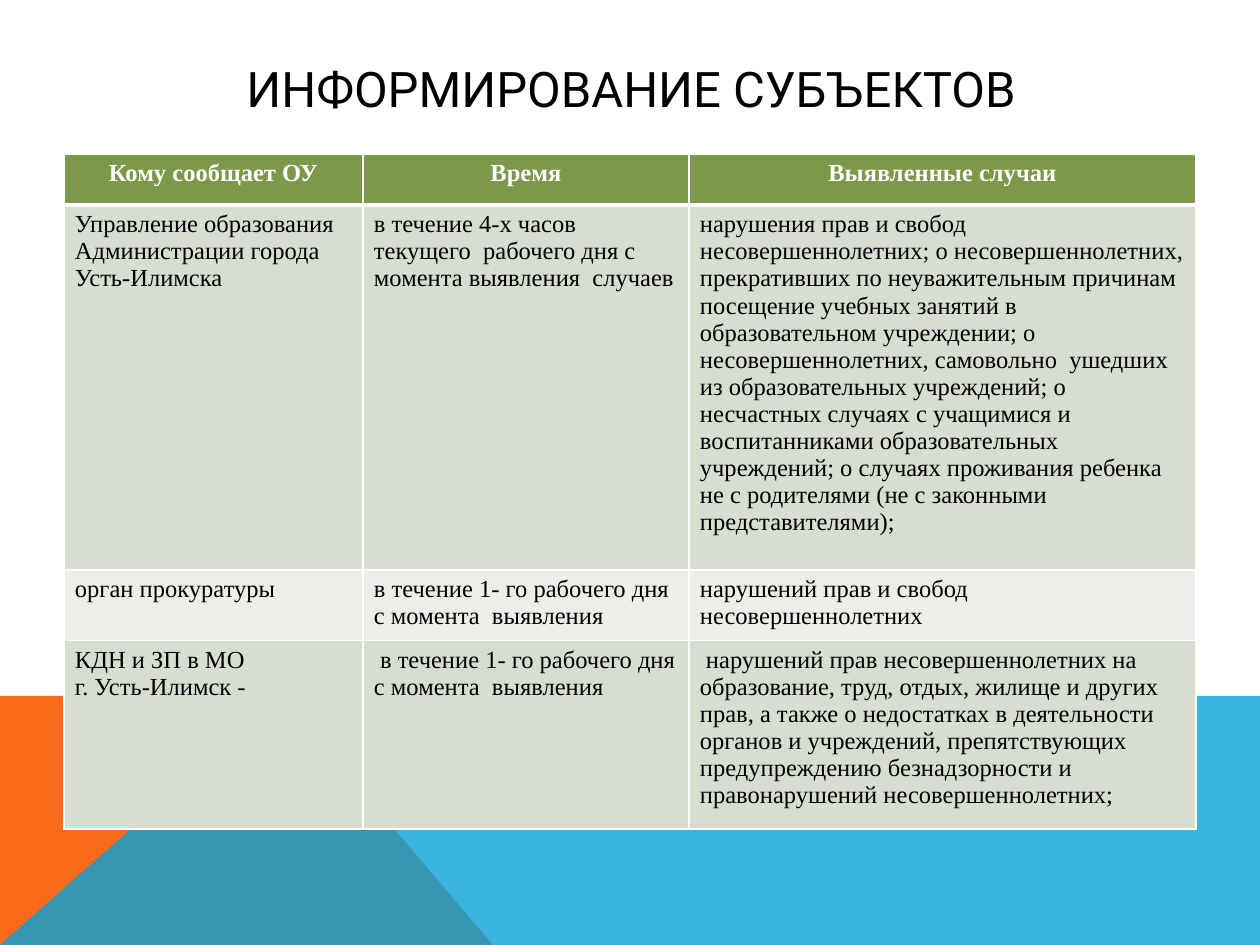
"""Builds the slide on whom a school informs, how soon and in which cases."""
from lxml.etree import SubElement
from pptx import Presentation
from pptx.dml.color import RGBColor
from pptx.enum.text import MSO_ANCHOR as Anchor, PP_ALIGN as Align
from pptx.oxml.ns import qn
from pptx.util import Pt

PX = 914400 // 126
WHITE, BLACK = "FFFFFF", "000000"
HEADER, BAND, LIGHT_BAND = "7C984A", "D7DDD0", "ECEFE9"


def color(hex_code):
    return RGBColor.from_string(hex_code)


def style_text(text_frame, font_name, size, hex_code, bold, align):
    for paragraph in text_frame.paragraphs:
        paragraph.alignment = align
        for run in paragraph.runs:
            run.font.name = font_name
            run.font.size = Pt(size)
            run.font.bold = bold
            run.font.color.rgb = color(hex_code)


presentation = Presentation()
presentation.slide_width = 1260 * PX
presentation.slide_height = 945 * PX
slide = presentation.slides.add_slide(presentation.slide_layouts[6])

corners = [
    ("F96A1B", 100, [(0, 945), (0, 696), (281, 696), (493, 945)]),
    ("08A1D9", 80, [(0, 945), (281, 696), (1260, 696), (1260, 945)]),
]
for fill, opacity, points in corners:
    builder = slide.shapes.build_freeform(*points[0], scale=PX)
    builder.add_line_segments(points[1:], close=True)
    shape = builder.convert_to_shape()
    shape.shadow.inherit = False
    shape.line.fill.background()
    shape.fill.solid()
    shape.fill.fore_color.rgb = color(fill)
    if opacity < 100:
        fill_color = shape.fill._xPr.find(qn("a:solidFill"))[0]
        SubElement(fill_color, qn("a:alpha"), val=str(opacity * 1000))

title = slide.shapes.add_textbox(113 * PX, 50 * PX, 1036 * PX, 76 * PX)
title.text_frame.word_wrap = True
title.text_frame.vertical_anchor = Anchor.MIDDLE
title.text_frame.text = "ИНФОРМИРОВАНИЕ СУБЪЕКТОВ"
style_text(title.text_frame, "Roboto", 28, BLACK, False, Align.CENTER)

rows = [
    ("Кому сообщает ОУ", "Время", "Выявленные случаи"),
    (
        "Управление образования Администрации города Усть-Илимска",
        "в течение 4-х часов текущего  рабочего дня с момента выявления  случаев",
        "нарушения прав и свобод несовершеннолетних; о несовершеннолетних, "
        "прекративших по неуважительным причинам  посещение учебных занятий в "
        "образовательном учреждении; о несовершеннолетних, самовольно  ушедших из "
        "образовательных учреждений; о несчастных случаях с учащимися и "
        "воспитанниками образовательных учреждений; о случаях проживания ребенка "
        "не с родителями (не с законными представителями);",
    ),
    (
        "орган прокуратуры",
        "в течение 1- го рабочего дня с момента  выявления",
        "нарушений прав и свобод несовершеннолетних",
    ),
    (
        "КДН и ЗП в МО\nг. Усть-Илимск -",
        " в течение 1- го рабочего дня с момента  выявления",
        " нарушений прав несовершеннолетних на образование, труд, отдых, жилище и "
        "других прав, а также о недостатках в деятельности органов и учреждений, "
        "препятствующих предупреждению безнадзорности и правонарушений "
        "несовершеннолетних;",
    ),
]
column_widths = [299, 326, 507]
row_heights = [51, 365, 67, 175]
row_fills = [HEADER, BAND, LIGHT_BAND, BAND]

table = slide.shapes.add_table(
    len(rows), len(column_widths), 64 * PX, 154 * PX,
    sum(column_widths) * PX, sum(row_heights) * PX,
).table
for column, width in zip(table.columns, column_widths):
    column.width = width * PX
for row, height in zip(table.rows, row_heights):
    row.height = height * PX

for row_index, texts in enumerate(rows):
    is_header = row_index == 0
    for column_index, text in enumerate(texts):
        cell = table.cell(row_index, column_index)
        cell.text_frame.text = text
        cell.margin_left = cell.margin_right = 11 * PX
        cell.margin_top = cell.margin_bottom = 6 * PX
        style_text(
            cell.text_frame, "Times New Roman", 14,
            WHITE if is_header else BLACK, is_header,
            Align.CENTER if is_header else Align.LEFT,
        )
        properties = cell._tc.get_or_add_tcPr()
        for side in ("lnL", "lnR", "lnT", "lnB"):
            thick = (is_header and side == "lnB") or (row_index == 1 and side == "lnT")
            border = SubElement(properties, qn(f"a:{side}"), w=str(Pt(3 if thick else 1)))
            border_fill = SubElement(border, qn("a:solidFill"))
            SubElement(border_fill, qn("a:srgbClr"), val=WHITE)
        cell.fill.solid()
        cell.fill.fore_color.rgb = color(row_fills[row_index])

presentation.save("out.pptx")
